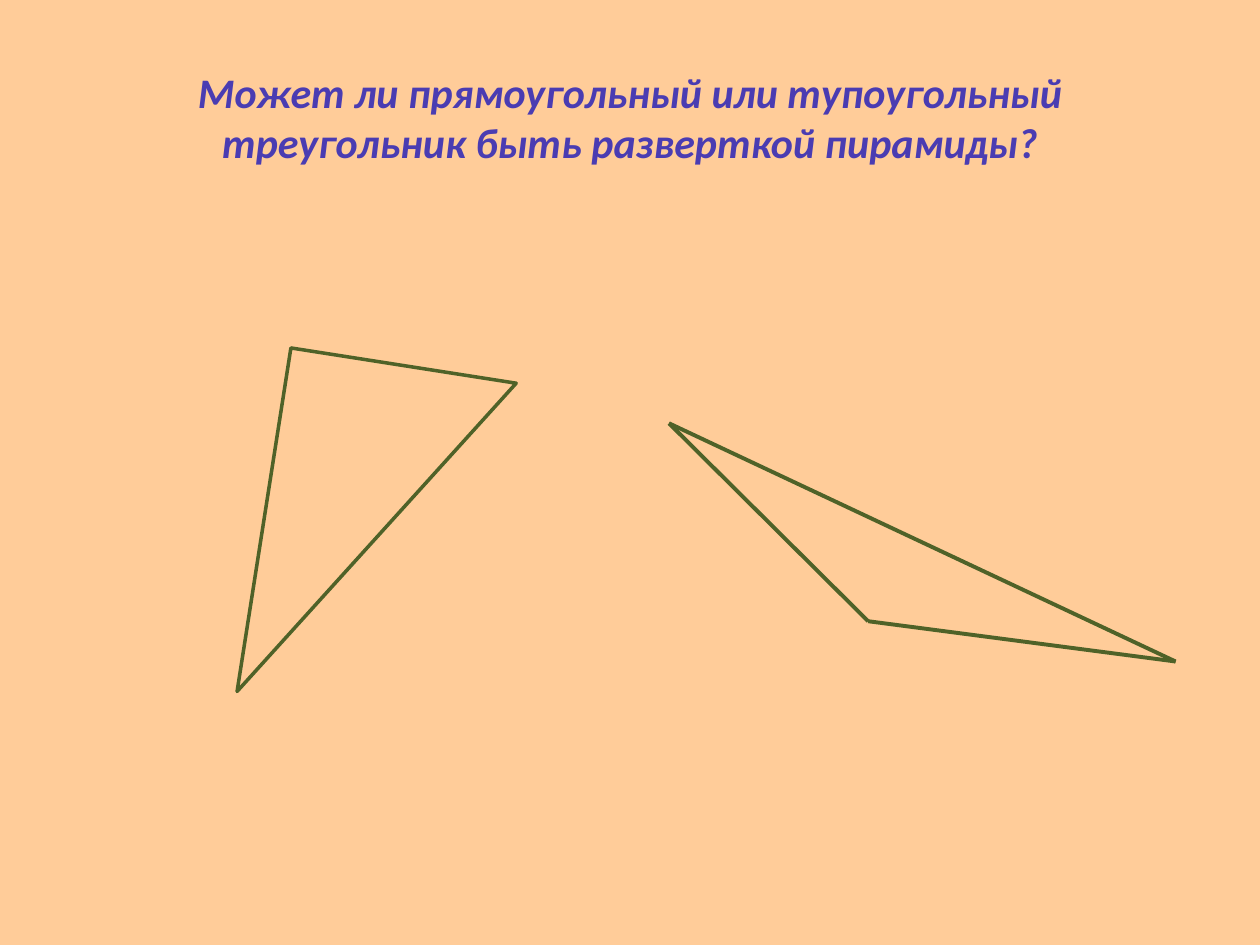
from itertools import combinations

from lxml import etree
from pptx import Presentation
from pptx.dml.color import RGBColor
from pptx.enum import shapes, text
from pptx.oxml import ns
from pptx.util import Pt

PEACH = RGBColor(0xFF, 0xCC, 0x99)
VIOLET = RGBColor(0x4A, 0x3C, 0xB2)
OLIVE = RGBColor(0x4F, 0x62, 0x28)

QUESTION = "Может ли прямоугольный или тупоугольный треугольник быть разверткой пирамиды?"
OBTUSE_VERTICES = [(382.3, 241.9), (496.1, 355), (671.8, 378)]


def style_line(line, width):
    line.color.rgb = OLIVE
    line.width = Pt(width)


def add_question(slide):
    question = slide.shapes.title
    frame_box = {"left": 36, "top": 21.6, "width": 648, "height": 90}
    for name, value in frame_box.items():
        setattr(question, name, Pt(value))
    frame = question.text_frame
    frame.text = QUESTION
    frame.word_wrap = True
    frame.vertical_anchor = text.MSO_ANCHOR.MIDDLE
    paragraph = frame.paragraphs[0]
    paragraph.alignment = text.PP_ALIGN.CENTER
    font = paragraph.runs[0].font
    font_format = {"name": "Calibri", "size": Pt(24), "bold": True, "italic": True}
    for name, value in font_format.items():
        setattr(font, name, value)
    font.color.rgb = VIOLET


def add_right_triangle(slide, left, top, width, height, rotation):
    triangle = slide.shapes.add_shape(
        shapes.MSO_SHAPE.RIGHT_TRIANGLE, Pt(left), Pt(top), Pt(width), Pt(height))
    triangle.rotation = rotation
    triangle.shadow.inherit = False
    triangle.fill.background()
    style_line(triangle.line, 2)


def add_side(slide, start, end):
    side = slide.shapes.add_connector(
        shapes.MSO_CONNECTOR.STRAIGHT, *(Pt(value) for value in start + end))
    style_line(side.line, 2.25)
    etree.SubElement(side._element.spPr, ns.qn("a:effectLst"))


def main():
    deck = Presentation()
    deck.slide_width, deck.slide_height = Pt(720), Pt(540)
    slide = deck.slides.add_slide(deck.slide_layouts[5])
    slide.background.fill.solid()
    slide.background.fill.fore_color.rgb = PEACH
    add_question(slide)
    add_right_triangle(slide, 115.9, 241.9, 198.7, 130.3, 98.9)
    for start, end in combinations(OBTUSE_VERTICES, 2):
        add_side(slide, start, end)
    deck.save("out.pptx")


if __name__ == "__main__":
    main()
